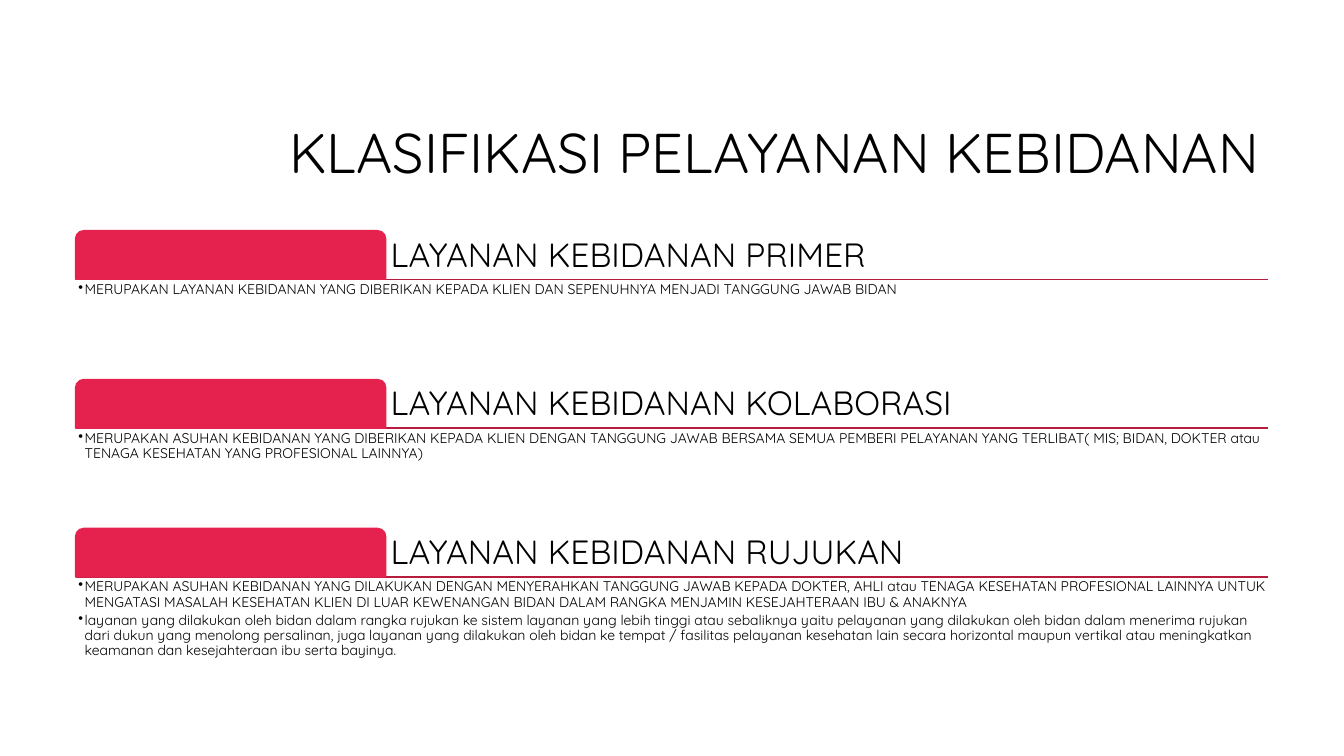
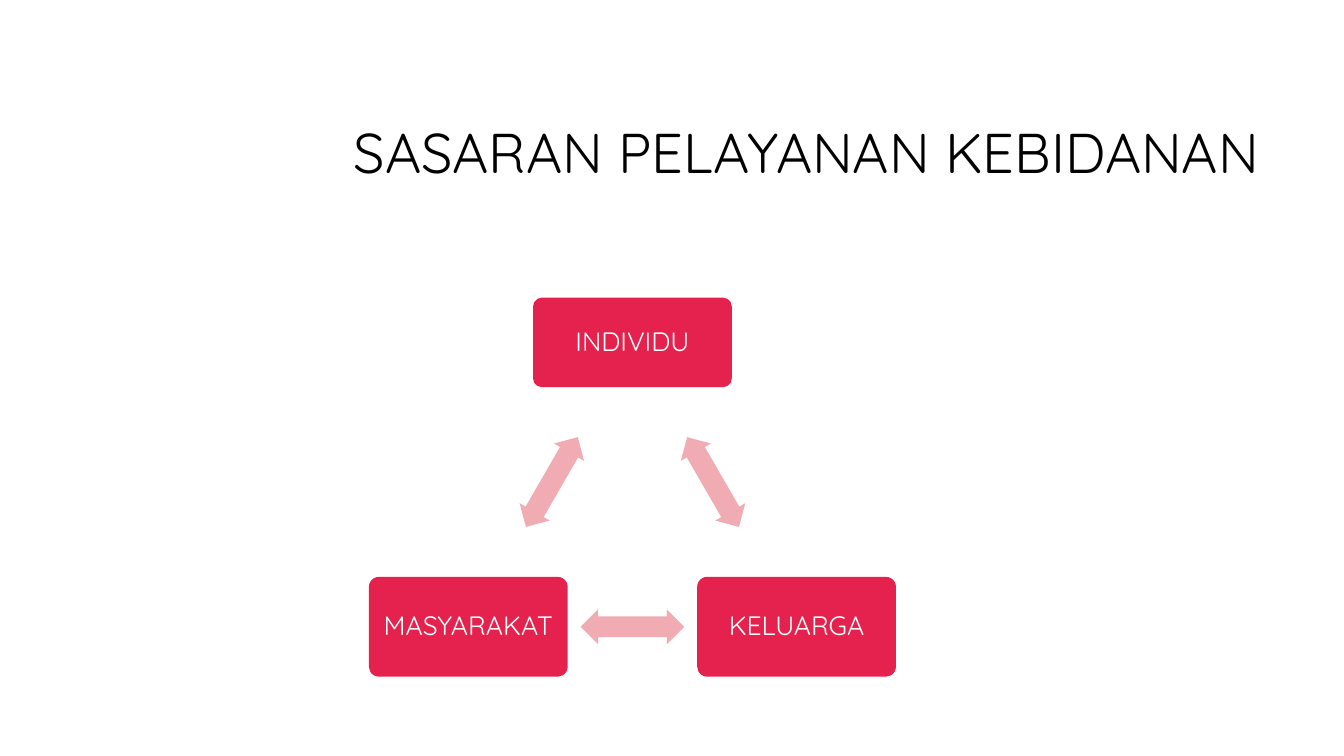
import math
from itertools import combinations

from lxml import etree
from pptx import Presentation
from pptx.dml.color import RGBColor
from pptx.enum import shapes, text
from pptx.oxml import ns
from pptx.util import Pt

COLORS = {
    "crimson": "E5224E",
    "rule": "B71B3E",
    "arrow": "F0ACB2",
    "ink": "000000",
    "paper": "FFFFFF",
}
FONT = "Quicksand"
SLIDE_WIDTH, SLIDE_HEIGHT = 960, 540
TITLE_TOP, TITLE_RIGHT, TITLE_HEIGHT = 60.5, 906.5, 101.5

SERVICES = [
    ("LAYANAN KEBIDANAN PRIMER", [
        "MERUPAKAN LAYANAN KEBIDANAN YANG DIBERIKAN KEPADA KLIEN DAN SEPENUHNYA "
        "MENJADI TANGGUNG JAWAB BIDAN",
    ]),
    ("LAYANAN KEBIDANAN KOLABORASI", [
        "MERUPAKAN ASUHAN KEBIDANAN YANG DIBERIKAN KEPADA KLIEN DENGAN TANGGUNG "
        "JAWAB BERSAMA SEMUA PEMBERI PELAYANAN YANG TERLIBAT( MIS; BIDAN, DOKTER "
        "atau TENAGA KESEHATAN YANG PROFESIONAL LAINNYA)",
    ]),
    ("LAYANAN KEBIDANAN RUJUKAN", [
        "MERUPAKAN ASUHAN KEBIDANAN YANG DILAKUKAN DENGAN MENYERAHKAN TANGGUNG "
        "JAWAB KEPADA DOKTER, AHLI atau TENAGA KESEHATAN PROFESIONAL LAINNYA UNTUK "
        "MENGATASI MASALAH KESEHATAN KLIEN DI LUAR KEWENANGAN BIDAN DALAM RANGKA "
        "MENJAMIN KESEJAHTERAAN IBU & ANAKNYA",
        "layanan yang dilakukan oleh bidan dalam rangka rujukan ke sistem layanan "
        "yang lebih tinggi atau sebaliknya yaitu pelayanan yang dilakukan oleh bidan "
        "dalam menerima rujukan dari dukun yang menolong persalinan, juga layanan "
        "yang dilakukan oleh bidan ke tempat / fasilitas pelayanan kesehatan lain "
        "secara horizontal maupun vertikal atau meningkatkan keamanan dan "
        "kesejahteraan ibu serta bayinya.",
    ]),
]
# Name, height and direction from the centre of the cycle in degrees.
TARGETS = [("INDIVIDU", 64, -90), ("KELUARGA", 71.3, 30), ("MASYARAKAT", 71.3, 150)]


def color(name):
    return RGBColor.from_string(COLORS[name])


def add_bullet(paragraph, indent):
    properties = paragraph._p.get_or_add_pPr()
    properties.set("marL", str(Pt(indent)))
    properties.set("indent", str(Pt(-indent)))
    etree.SubElement(properties, ns.qn("a:buChar")).set("char", "•")


def write(shape, lines, size, ink="ink", align=text.PP_ALIGN.LEFT,
          anchor=text.MSO_ANCHOR.TOP, inset=None, after=0, bullet_indent=None):
    """Fill a shape with one paragraph per line, all in the same style."""
    frame = shape.text_frame
    frame.word_wrap = True
    frame.auto_size = text.MSO_AUTO_SIZE.NONE
    frame.vertical_anchor = anchor
    if inset is not None:
        frame.margin_left = frame.margin_right = Pt(inset)
        frame.margin_top = frame.margin_bottom = Pt(inset)
    frame.text = "\n".join(lines)
    for paragraph in frame.paragraphs:
        if bullet_indent:
            add_bullet(paragraph, bullet_indent)
        paragraph.alignment = align
        paragraph.line_spacing = 0.9
        paragraph.space_after = Pt(after)
        paragraph.font.name = FONT
        paragraph.font.size = Pt(size)
        paragraph.font.color.rgb = color(ink)


def add_text(slide, box, lines, size, **style):
    write(slide.shapes.add_textbox(*map(Pt, box)), lines, size, **style)


def add_block(slide, preset, box, fill, adjustments):
    block = slide.shapes.add_shape(preset, *map(Pt, box))
    for index, value in enumerate(adjustments):
        block.adjustments[index] = value
    block.shadow.inherit = False
    block.fill.solid()
    block.fill.fore_color.rgb = color(fill)
    block.line.fill.background()
    return block


def add_rule(slide, left, right, y):
    rule = slide.shapes.add_connector(
        shapes.MSO_CONNECTOR.STRAIGHT, Pt(left), Pt(y), Pt(right), Pt(y))
    rule.line.color.rgb = color("rule")
    rule.line.width = Pt(1)
    etree.SubElement(rule._element.spPr, ns.qn("a:effectLst"))


def add_titled_slide(deck, title, left):
    slide = deck.slides.add_slide(deck.slide_layouts[5])
    heading = slide.shapes.title
    heading.left, heading.top = Pt(left), Pt(TITLE_TOP)
    heading.width, heading.height = Pt(TITLE_RIGHT - left), Pt(TITLE_HEIGHT)
    write(heading, [title], 40, align=text.PP_ALIGN.RIGHT,
          anchor=text.MSO_ANCHOR.MIDDLE)
    return slide


def add_service(slide, box, heading, details):
    """Place a tab, its heading, a rule and the bulleted details."""
    left, top, width, height = box
    tab_width, tab_height = 0.26 * width, 34.7
    rule_y = top + tab_height
    add_rule(slide, left, left + width, rule_y)
    add_text(slide, (left + tab_width, top, width - tab_width, tab_height),
             [heading], 24, anchor=text.MSO_ANCHOR.BOTTOM, inset=3.6)
    tab = add_block(slide, shapes.MSO_SHAPE.ROUND_2_SAME_RECTANGLE,
                    (left, top, tab_width, tab_height), "crimson", (0.167, 0))
    tab.line.color.rgb = color("crimson")
    tab.line.width = Pt(1)
    add_text(slide, (left, rule_y, width, height - tab_height),
             details, 10, inset=2, after=2, bullet_indent=4.5)


def add_service_list(slide, box):
    left, top, width, height = box
    gap = 2
    row_height = (height - gap * (len(SERVICES) - 1)) / len(SERVICES)
    for row, (heading, details) in enumerate(SERVICES):
        row_top = top + row * (row_height + gap)
        add_service(slide, (left, row_top, width, row_height), heading, details)


def add_target_cycle(slide, box):
    """Place the targets on a triangle and an arrow in each gap between them."""
    left, top, width, height = box
    node_width, arrow_width, arrow_height = 142, 74, 24.8
    radius = (width - node_width) / math.sqrt(3)
    center_x, center_y = left + width / 2, top + TARGETS[0][1] / 2 + radius
    nodes = []
    for name, node_height, direction in TARGETS:
        x = center_x + radius * math.cos(math.radians(direction))
        y = center_y + radius * math.sin(math.radians(direction))
        node = add_block(
            slide, shapes.MSO_SHAPE.ROUNDED_RECTANGLE,
            (x - node_width / 2, y - node_height / 2, node_width, node_height),
            "crimson", (0.1,))
        write(node, [name], 19, ink="paper", align=text.PP_ALIGN.CENTER,
              anchor=text.MSO_ANCHOR.MIDDLE, inset=6)
        nodes.append((x, y, node_height))
    for (x1, y1, height1), (x2, y2, height2) in combinations(nodes, 2):
        # Unequal node heights move the middle of the gap along the side.
        share = 0.5 + (height1 - height2) / (6 * radius)
        x, y = x1 + share * (x2 - x1), y1 + share * (y2 - y1)
        arrow = add_block(
            slide, shapes.MSO_SHAPE.LEFT_RIGHT_ARROW,
            (x - arrow_width / 2, y - arrow_height / 2, arrow_width, arrow_height),
            "arrow", (0.6, 0.5))
        arrow.rotation = math.degrees(math.atan2(y2 - y1, x2 - x1)) % 360


def main():
    deck = Presentation()
    deck.slide_width, deck.slide_height = Pt(SLIDE_WIDTH), Pt(SLIDE_HEIGHT)

    services = add_titled_slide(deck, "KLASIFIKASI PELAYANAN KEBIDANAN", 157.5)
    add_service_list(services, (54, 164.8, 852, 317))

    targets = add_titled_slide(deck, "SASARAN PELAYANAN KEBIDANAN", 139.5)
    add_target_cycle(targets, (263.5, 212.6, 376.5, 271.2))

    deck.save("out.pptx")


if __name__ == "__main__":
    main()
